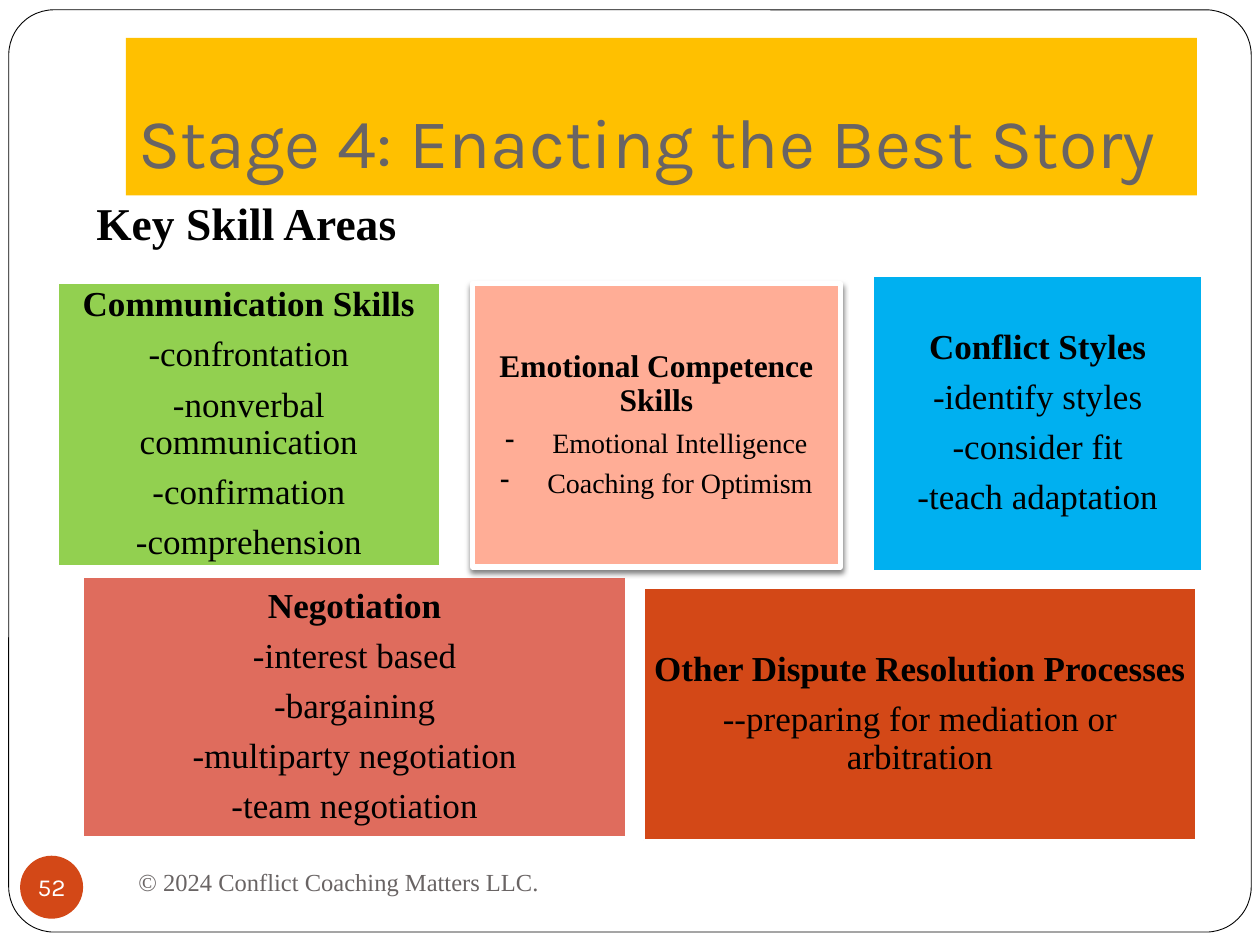
from dataclasses import dataclass

from lxml.etree import SubElement
from pptx import Presentation
from pptx.dml.color import RGBColor
from pptx.enum.shapes import MSO_SHAPE
from pptx.enum.text import MSO_ANCHOR, PP_ALIGN
from pptx.oxml.ns import qn
from pptx.util import Pt


@dataclass(frozen=True)
class Theme:
    heading: str = "Karla"
    body: str = "Times New Roman"
    black: str = "000000"
    white: str = "FFFFFF"
    gray: str = "696464"
    gold: str = "FFC000"
    green: str = "92D050"
    peach: str = "FFAD96"
    blue: str = "00B0F0"
    coral: str = "DF6C5D"
    rust: str = "D34817"
    title_size: int = 40
    subtitle_size: int = 26
    skill_size: int = 20
    emotion_title_size: int = 18
    emotion_size: int = 16
    small_size: int = 14


theme = Theme()
presentation = Presentation()
presentation.slide_width, presentation.slide_height = Pt(720), Pt(540)
slide = presentation.slides.add_slide(presentation.slide_layouts[6])


def add_block(kind, place, fill=None, line=None, line_width=1,
              anchor=MSO_ANCHOR.MIDDLE, insets=(7.2, 3.6, 7.2, 3.6)):
    """Add a preset shape, or a plain text box when kind is None."""
    lengths = [Pt(value) for value in place]
    if kind is None:
        block = slide.shapes.add_textbox(*lengths)
    else:
        block = slide.shapes.add_shape(kind, *lengths)
        block.shadow.inherit = False
        block.fill.solid()
        block.fill.fore_color.rgb = RGBColor.from_string(fill)
        if line:
            block.line.color.rgb = RGBColor.from_string(line)
            block.line.width = Pt(line_width)
        else:
            block.line.fill.background()
    frame = block.text_frame
    frame.word_wrap = True
    frame.vertical_anchor = anchor
    frame.margin_left, frame.margin_top, frame.margin_right, frame.margin_bottom = (
        Pt(inset) for inset in insets)
    return block


def write(paragraph, text, size, color=theme.black, font=theme.body,
          bold=False, align=PP_ALIGN.LEFT):
    paragraph.alignment = align
    run = paragraph.add_run()
    run.text = text
    run.font.size = Pt(size)
    run.font.name = font
    run.font.bold = bold
    run.font.color.rgb = RGBColor.from_string(color)


# Page frame
page_frame = add_block(MSO_SHAPE.ROUNDED_RECTANGLE, (5, 5.6, 710, 527),
                       theme.white, theme.black, 0.5)
page_frame.adjustments[0] = 0.049

# Title band and subtitle
title = add_block(MSO_SHAPE.RECTANGLE, (72, 21.6, 612, 90), theme.gold,
                  anchor=MSO_ANCHOR.BOTTOM, insets=(7.2, 3.6, 7.2, 7.2))
write(title.text_frame.paragraphs[0], "Stage 4: Enacting the Best Story",
      theme.title_size, theme.gray, theme.heading)

subtitle = add_block(None, (48, 108, 600, 39), anchor=MSO_ANCHOR.TOP)
write(subtitle.text_frame.paragraphs[0], "Key Skill Areas",
      theme.subtitle_size, bold=True)

# Skill cards: place, fill, outline width, inset, sizes, lines, bulleted
regular = (1, 5.76, theme.skill_size, theme.skill_size)
raised = (3, 6.5, theme.emotion_title_size, theme.emotion_size)
cards = [
    ((499, 157.7, 188, 168.5), theme.blue, regular, False,
     ["Conflict Styles", "-identify styles", "-consider fit",
      "-teach adaptation"]),
    ((33.1, 162, 218.2, 161.3), theme.green, regular, False,
     ["Communication Skills", "-confrontation", "-nonverbal communication",
      "-confirmation", "-comprehension"]),
    ((47.5, 329.8, 310.3, 148.3), theme.coral, regular, False,
     ["Negotiation", "-interest based", "-bargaining",
      "-multiparty negotiation", "-team negotiation"]),
    ((368, 336.2, 315.4, 144), theme.rust, regular, False,
     ["Other Dispute Resolution Processes",
      "--preparing for mediation or arbitration"]),
    ((270, 162, 210.2, 162), theme.peach, raised, True,
     ["Emotional Competence Skills", "Emotional Intelligence",
      "Coaching for Optimism"]),
]
for place, fill, (outline, inset, head_size, item_size), bulleted, lines in cards:
    card = add_block(MSO_SHAPE.RECTANGLE, place, fill, theme.white, outline,
                     insets=(inset,) * 4)
    for index, text in enumerate(lines):
        paragraph = (card.text_frame.add_paragraph() if index
                     else card.text_frame.paragraphs[0])
        size = item_size if index else head_size
        paragraph.line_spacing = 0.9
        paragraph.space_after = Pt(round(size * 0.35, 1))
        if bulleted and index:
            properties = paragraph._p.get_or_add_pPr()
            properties.set("marL", str(Pt(27)))
            properties.set("indent", str(-Pt(27)))
            SubElement(properties, qn("a:buChar"), char="-")
        write(paragraph, text, size, bold=index == 0, align=PP_ALIGN.CENTER)

    # Soft shadow under the raised card
    if bulleted:
        effects = card._element.spPr.find(qn("a:effectLst"))
        shadow = SubElement(effects, qn("a:outerShdw"), blurRad=str(Pt(3)),
                            dist=str(Pt(2)), dir="5400000", rotWithShape="0")
        shade = SubElement(shadow, qn("a:srgbClr"), val=theme.black)
        SubElement(shade, qn("a:alpha"), val="50000")

# Slide number and copyright line
number = add_block(MSO_SHAPE.OVAL, (11.5, 489, 36, 36), theme.rust,
                   insets=(0, 0, 0, 0))
number.text_frame.word_wrap = False
write(number.text_frame.paragraphs[0], "52", theme.small_size, theme.white,
      theme.heading, align=PP_ALIGN.CENTER)

footer = add_block(None, (72, 486, 312, 36))
write(footer.text_frame.paragraphs[0], "© 2024 Conflict Coaching Matters LLC.",
      theme.small_size, theme.gray)

presentation.save("out.pptx")
